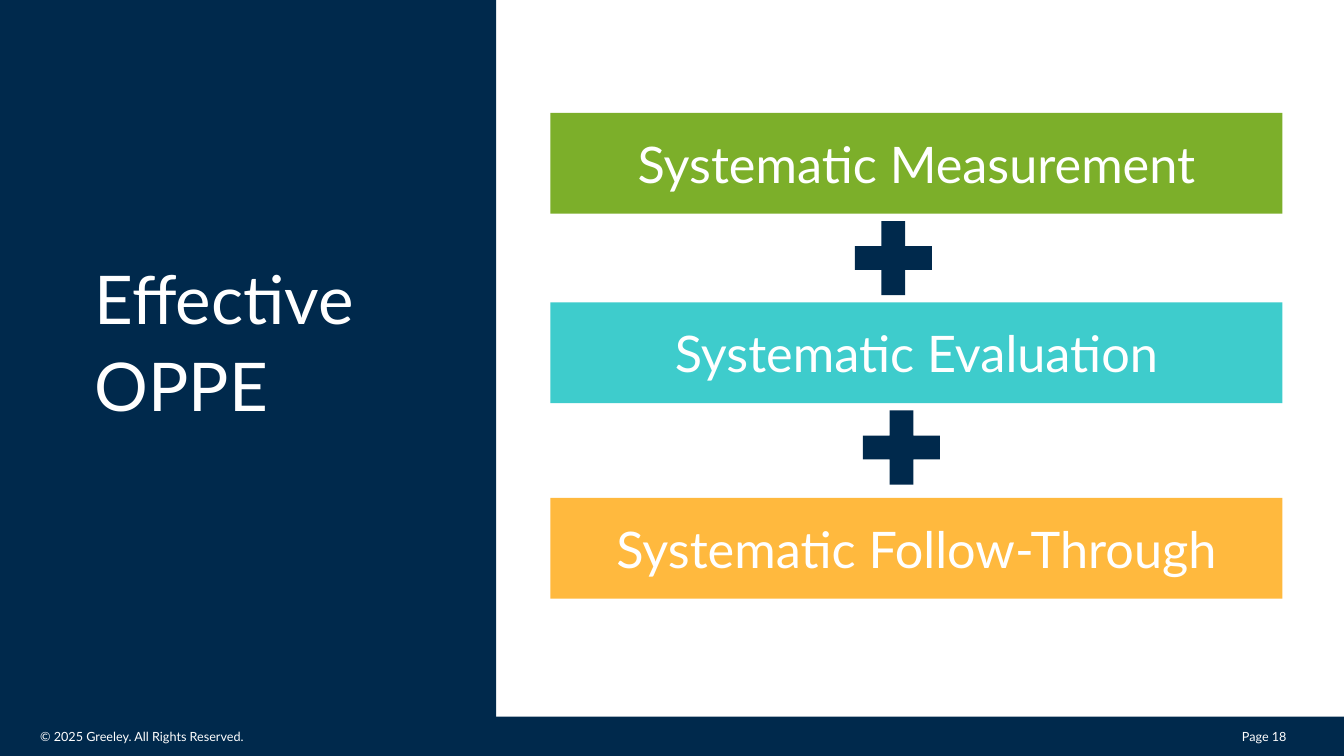
from typing import NamedTuple

from pptx import Presentation
from pptx.dml.color import RGBColor
from pptx.enum.shapes import MSO_SHAPE
from pptx.enum.text import MSO_ANCHOR, MSO_AUTO_SIZE, PP_ALIGN
from pptx.shapes.autoshape import Shape
from pptx.slide import Slide
from pptx.text.text import TextFrame
from pptx.util import Inches, Pt

RECT, PLUS = MSO_SHAPE.RECTANGLE, MSO_SHAPE.MATH_PLUS
TOP, MIDDLE = MSO_ANCHOR.TOP, MSO_ANCHOR.MIDDLE
LEFT, CENTER = PP_ALIGN.LEFT, PP_ALIGN.CENTER
FIXED = MSO_AUTO_SIZE.NONE

NAVY = RGBColor(0x00, 0x29, 0x4C)
GREEN = RGBColor(0x7C, 0xAF, 0x2A)
TEAL = RGBColor(0x3E, 0xCC, 0xCC)
AMBER = RGBColor(0xFF, 0xB9, 0x3E)
WHITE = RGBColor(0xFF, 0xFF, 0xFF)
FONT = "Lato"
WIDTH, HEIGHT = Inches(13.33), Inches(7.5)


class Box(NamedTuple):
    """Left, top, width and height in percent of the slide's size."""
    left: float
    top: float
    width: float
    height: float

    def scale(self) -> tuple[int, int, int, int]:
        return (int(self.left * WIDTH / 100), int(self.top * HEIGHT / 100),
                int(self.width * WIDTH / 100), int(self.height * HEIGHT / 100))


class Step(NamedTuple):
    text: str
    top: float
    color: RGBColor


class Label(NamedTuple):
    text: str
    box: Box


PANEL = Box(0, 0, 36.91, 95.47)
FOOTER = Box(0, 94.8, 100, 5.2)
TITLE = Box(6.68, 32.67, 31.36, 23.6)
STEPS = [
    Step("Systematic Measurement", 14.93, GREEN),
    Step("Systematic Evaluation", 40, TEAL),
    Step("Systematic Follow-Through", 65.87, AMBER),
]
SIGNS = [Box(62.57, 27.47, 7.8, 13.33), Box(63.17, 52.53, 7.8, 13.33)]
LABELS = [
    Label("© 2025 Greeley. All Rights Reserved.", Box(2.25, 95.73, 33.61, 3.47)),
    Label("Page 18", Box(91.67, 95.73, 7.88, 3.47)),
]


def write(frame: TextFrame, text: str, size: int, align: PP_ALIGN,
          anchor: MSO_ANCHOR) -> None:
    frame.text = text
    frame.word_wrap = True
    frame.auto_size = FIXED
    frame.vertical_anchor = anchor
    line = frame.paragraphs[0]
    line.alignment = align
    for run in line.runs:
        run.font.name = FONT
        run.font.size = Pt(size)
        run.font.color.rgb = WHITE


def draw(slide: Slide, kind: MSO_SHAPE, box: Box, color: RGBColor) -> Shape:
    shape = slide.shapes.add_shape(kind, *box.scale())
    shape.shadow.inherit = False
    shape.fill.solid()
    shape.fill.fore_color.rgb = color
    shape.line.fill.background()
    return shape


def head(slide: Slide, panel: Shape) -> None:
    """Set the title and bring it in front of the panel."""
    title = slide.shapes.title
    title.left, title.top, title.width, title.height = TITLE.scale()
    frame = title.text_frame
    write(frame, "Effective\vOPPE", 48, LEFT, TOP)
    frame.margin_left = frame.margin_right = Inches(0.05)
    frame.margin_top = frame.margin_bottom = Inches(0.05)
    frame.paragraphs[0].line_spacing = 1.07
    panel.element.addnext(title.element)


def main() -> None:
    deck = Presentation()
    deck.slide_width, deck.slide_height = WIDTH, HEIGHT
    slide = deck.slides.add_slide(deck.slide_layouts.get_by_name("Title Only"))

    draw(slide, RECT, FOOTER, NAVY)
    for label in LABELS:
        note = slide.shapes.add_textbox(*label.box.scale())
        write(note.text_frame, label.text, 9, LEFT, TOP)

    head(slide, draw(slide, RECT, PANEL, NAVY))
    for step in STEPS:
        bar = draw(slide, RECT, Box(40.96, step.top, 54.46, 13.33), step.color)
        write(bar.text_frame, step.text, 36, CENTER, MIDDLE)
    for sign in SIGNS:
        draw(slide, PLUS, sign, NAVY)

    deck.save("out.pptx")


if __name__ == "__main__":
    main()
